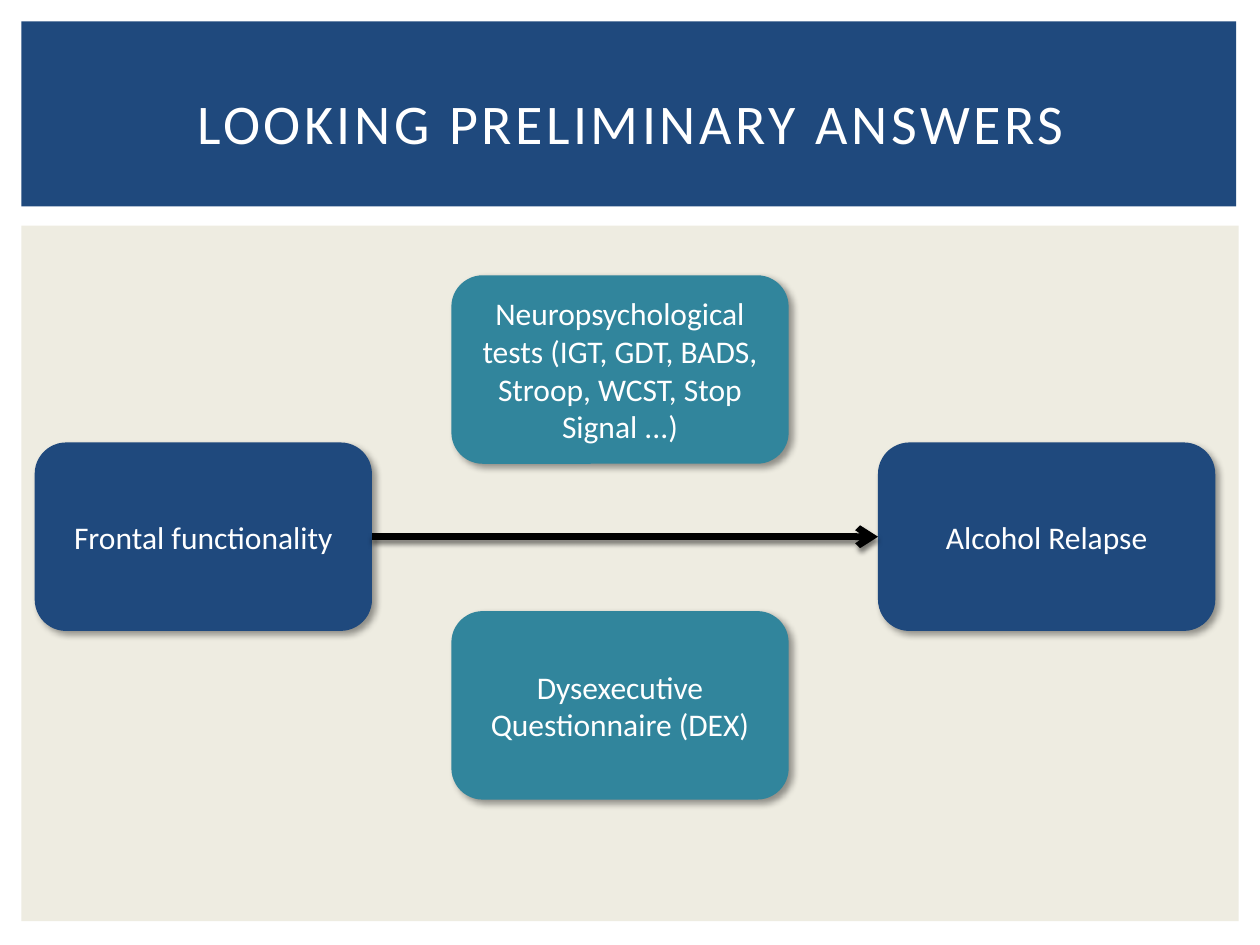
"""Build a slide linking frontal functionality to alcohol relapse."""
from lxml.etree import SubElement
from pptx import Presentation
from pptx.dml.color import RGBColor
from pptx.enum.shapes import MSO_CONNECTOR, MSO_SHAPE
from pptx.enum.text import MSO_ANCHOR, PP_ALIGN
from pptx.oxml.ns import qn
from pptx.util import Cm, Pt

NAVY = RGBColor(0x1F, 0x49, 0x7D)
TEAL = RGBColor(0x31, 0x85, 0x9C)
CREAM = RGBColor(0xEE, 0xEC, 0xE1)
WHITE = RGBColor(0xFF, 0xFF, 0xFF)
BLACK = RGBColor(0, 0, 0)

TITLE = "LOOKING PRELIMINARY ANSWERS"
PANELS = [
    (0.43, 4.55, 24.54, 14.02, CREAM),
    (0.43, 0.43, 24.49, 3.73, NAVY),
]
LEFT, MIDDLE, RIGHT = 0.7, 9.1, 17.7
UPPER, CENTRE, LOWER = 5.55, 8.92, 12.32
BOX_WIDTH, BOX_HEIGHT = 6.8, 3.8
BOXES = [
    ("Frontal functionality", LEFT, CENTRE, NAVY),
    ("Dysexecutive Questionnaire (DEX)", MIDDLE, LOWER, TEAL),
    ("Neuropsychological tests (IGT, GDT, BADS, Stroop, WCST, Stop Signal ...)",
     MIDDLE, UPPER, TEAL),
    ("Alcohol Relapse", RIGHT, CENTRE, NAVY),
]


def add_block(slide, kind, left, top, width, height, color):
    block = slide.shapes.add_shape(kind, Cm(left), Cm(top), Cm(width), Cm(height))
    block.shadow.inherit = False
    block.fill.solid()
    block.fill.fore_color.rgb = color
    block.line.fill.background()
    return block


def write(frame, text, size):
    frame.word_wrap = True
    frame.vertical_anchor = MSO_ANCHOR.MIDDLE
    paragraph = frame.paragraphs[0]
    paragraph.text = text
    paragraph.alignment = PP_ALIGN.CENTER
    font = paragraph.font
    font.name, font.size, font.color.rgb = "Calibri", Pt(size), WHITE


def cast_shadow(properties, opacity, blur, distance, degrees):
    effects = properties.find(qn("a:effectLst"))
    if effects is None:
        effects = SubElement(properties, qn("a:effectLst"))
    shadow = SubElement(effects, qn("a:outerShdw"), blurRad=str(Pt(blur)),
                        dist=str(Pt(distance)), dir=str(degrees * 60000),
                        rotWithShape="0")
    color = SubElement(shadow, qn("a:srgbClr"), val=str(BLACK))
    SubElement(color, qn("a:alpha"), val=str(opacity * 1000))


def add_title(slide):
    title = slide.shapes.title
    title.left, title.top, title.width, title.height = Cm(1.07), Cm(1), Cm(23.3), Cm(2.92)
    write(title.text_frame, TITLE, 32)
    title.text_frame.paragraphs[0].runs[0].font._element.set("spc", "200")
    slide.shapes._spTree.append(title._element)


def add_arrow(slide):
    level = Cm(CENTRE + BOX_HEIGHT / 2)
    arrow = slide.shapes.add_connector(
        MSO_CONNECTOR.STRAIGHT, Cm(LEFT + BOX_WIDTH), level, Cm(RIGHT), level)
    arrow.line.color.rgb = BLACK
    arrow.line.width = Pt(3.75)
    SubElement(arrow.line._get_or_add_ln(), qn("a:tailEnd"), type="arrow")
    cast_shadow(arrow._element.spPr, 50, 2.5, 2, 90)


def main():
    deck = Presentation()
    deck.slide_width, deck.slide_height = Cm(25.4), Cm(19.05)
    slide = deck.slides.add_slide(deck.slide_layouts[5])
    for panel in PANELS:
        add_block(slide, MSO_SHAPE.RECTANGLE, *panel)
    add_title(slide)
    for label, left, top, color in BOXES:
        box = add_block(slide, MSO_SHAPE.ROUNDED_RECTANGLE,
                        left, top, BOX_WIDTH, BOX_HEIGHT, color)
        write(box.text_frame, label, 18)
        cast_shadow(box._element.spPr, 40, 4, 3, 45)
    add_arrow(slide)
    deck.save("out.pptx")


if __name__ == "__main__":
    main()
